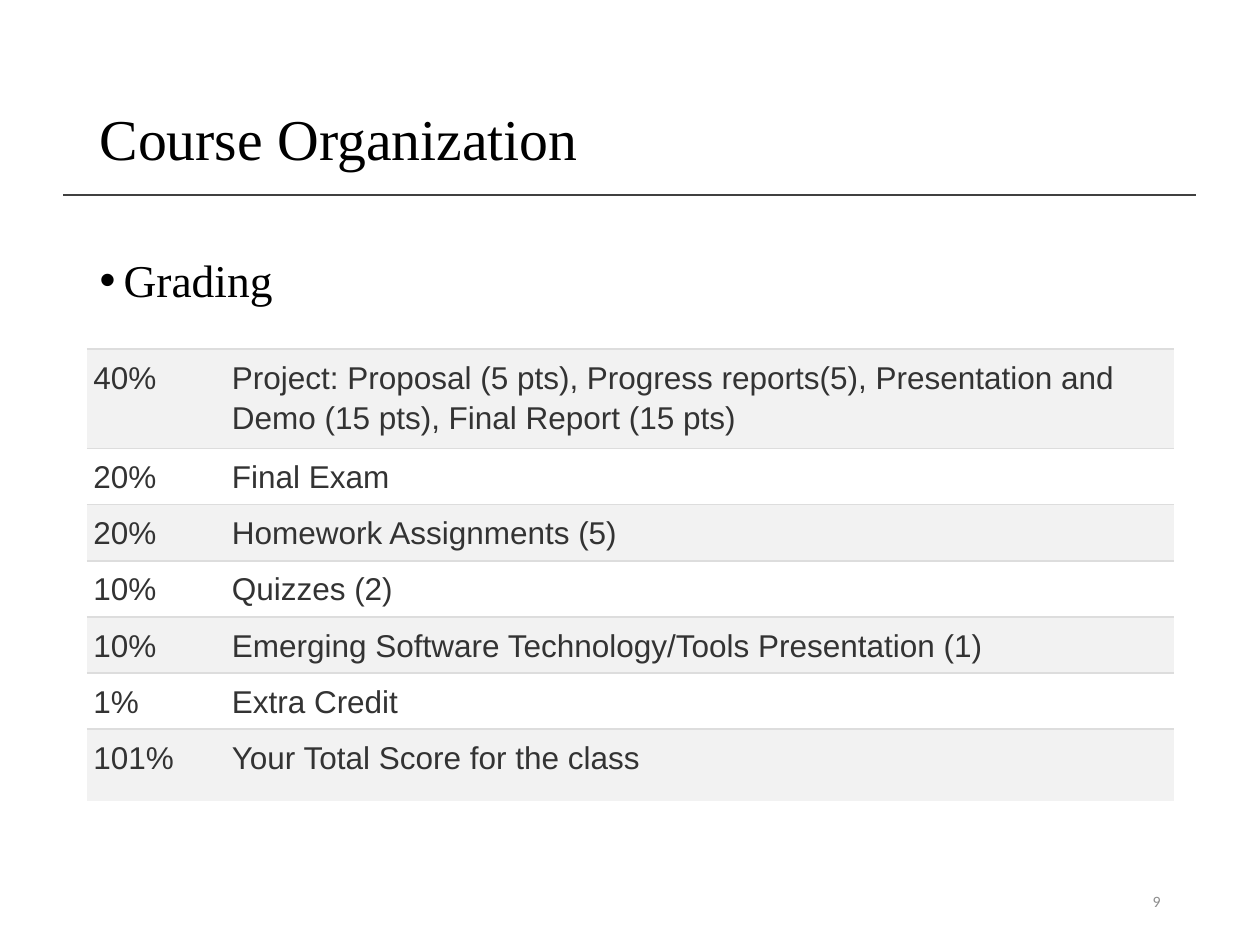
from lxml import etree
from pptx import Presentation
from pptx.dml.color import RGBColor
from pptx.enum.shapes import MSO_CONNECTOR
from pptx.enum.text import MSO_ANCHOR, PP_ALIGN
from pptx.oxml.ns import qn
from pptx.util import Inches, Pt

STRAIGHT = MSO_CONNECTOR.STRAIGHT
MIDDLE, TOP = MSO_ANCHOR.MIDDLE, MSO_ANCHOR.TOP
LEFT, RIGHT = PP_ALIGN.LEFT, PP_ALIGN.RIGHT

COLORS = {
    "title": "000000",
    "rule": "404040",
    "number": "8C8C8C",
    "cell": "333333",
    "border": "DDDDDD",
    "band": "F2F2F2",
    "plain": "FFFFFF",
}
SERIF, SANS, NUMBER_FONT = "Times New Roman", "Arial", "Calibri"

GRADES = [
    ("40%", "Project: Proposal (5 pts), Progress reports(5), Presentation and "
            "Demo (15 pts), Final Report (15 pts)"),
    ("20%", "Final Exam"),
    ("20%", "Homework Assignments (5)"),
    ("10%", "Quizzes (2)"),
    ("10%", "Emerging Software Technology/Tools Presentation (1)"),
    ("1%", "Extra Credit"),
    ("101%", "Your Total Score for the class"),
]
COLUMN_WIDTHS = [1.1, 7.53]
ROW_HEIGHTS = [0.68] + [0.41] * 5 + [0.57]


def color(name):
    return RGBColor.from_string(COLORS[name])


def place(shape, box):
    shape.left, shape.top, shape.width, shape.height = map(Inches, box)


def write(text_frame, text, font, size, color_name, align=LEFT, spacing=1.0):
    paragraph = text_frame.paragraphs[0]
    paragraph.alignment = align
    paragraph.line_spacing = spacing
    run = paragraph.add_run()
    run.text = text
    run.font.name = font
    run.font.size = Pt(size)
    run.font.color.rgb = color(color_name)
    return paragraph


def add_title(slide, box, text):
    title = slide.shapes.title
    place(title, box)
    title.text_frame.vertical_anchor = MIDDLE
    write(title.text_frame, text, SERIF, 33, "title", spacing=0.9)


def add_rule(slide, left, right, top):
    rule = slide.shapes.add_connector(
        STRAIGHT, Inches(left), Inches(top), Inches(right), Inches(top))
    rule.line.color.rgb = color("rule")
    rule.line.width = Pt(1)
    etree.SubElement(rule._element.spPr, qn("a:effectLst"))


def add_body(slide, box, text):
    body = slide.placeholders[1]
    place(body, box)
    body.text_frame.vertical_anchor = TOP
    paragraph = write(body.text_frame, text, SERIF, 26, "title", spacing=0.9)
    paragraph.space_before = Pt(7.5)
    properties = paragraph._p.get_or_add_pPr()
    properties.set("marL", str(Inches(0.19)))
    properties.set("indent", str(-Inches(0.19)))
    etree.SubElement(properties, qn("a:buFont"), typeface=SANS)
    etree.SubElement(properties, qn("a:buChar"), char="•")


def add_page_number(slide, box, text):
    text_box = slide.shapes.add_textbox(*map(Inches, box))
    text_box.text_frame.word_wrap = True
    text_box.text_frame.vertical_anchor = MIDDLE
    write(text_box.text_frame, text, NUMBER_FONT, 9, "number", RIGHT)


def set_borders(cell, visible_sides):
    properties = cell._tc.get_or_add_tcPr()
    for side in ("L", "R", "T", "B"):
        line = etree.SubElement(properties, qn(f"a:ln{side}"), w=str(Pt(1)))
        if side in visible_sides:
            fill = etree.SubElement(line, qn("a:solidFill"))
            etree.SubElement(fill, qn("a:srgbClr"), val=COLORS["border"])
        else:
            etree.SubElement(line, qn("a:noFill"))


def format_cell(cell, text, is_band, is_last):
    cell.margin_left = cell.margin_right = Inches(0.05)
    cell.margin_top = cell.margin_bottom = Inches(0.05)
    cell.vertical_anchor = TOP
    set_borders(cell, "T" if is_last else "TB")
    cell.fill.solid()
    cell.fill.fore_color.rgb = color("band" if is_band else "plain")
    paragraph = write(cell.text_frame, text, SANS, 18, "cell", spacing=1.15)
    if is_last:
        paragraph.space_after = Pt(15)


def add_grading_table(slide, box):
    table = slide.shapes.add_table(
        len(GRADES), len(COLUMN_WIDTHS), *map(Inches, box)).table
    table.first_row = table.horz_banding = False
    for column, width in zip(table.columns, COLUMN_WIDTHS):
        column.width = Inches(width)
    for row, height in zip(table.rows, ROW_HEIGHTS):
        row.height = Inches(height)
    for row_index, grade in enumerate(GRADES):
        is_last = row_index == len(GRADES) - 1
        for column_index, text in enumerate(grade):
            format_cell(table.cell(row_index, column_index), text,
                        row_index % 2 == 0, is_last)


def main():
    presentation = Presentation()
    presentation.slide_width = Inches(10)
    presentation.slide_height = Inches(7.5)
    slide = presentation.slides.add_slide(presentation.slide_layouts[1])
    left, width = 0.69, 8.62
    add_rule(slide, 0.5, 9.49, 1.55)
    add_title(slide, (left, 0.4, width, 1.45), "Course Organization")
    add_body(slide, (left, 2, width, 5.35), "Grading")
    add_page_number(slide, (7.06, 6.95, 2.25, 0.4), "9")
    add_grading_table(slide, (left, 2.77, width, sum(ROW_HEIGHTS)))
    presentation.save("out.pptx")


if __name__ == "__main__":
    main()
